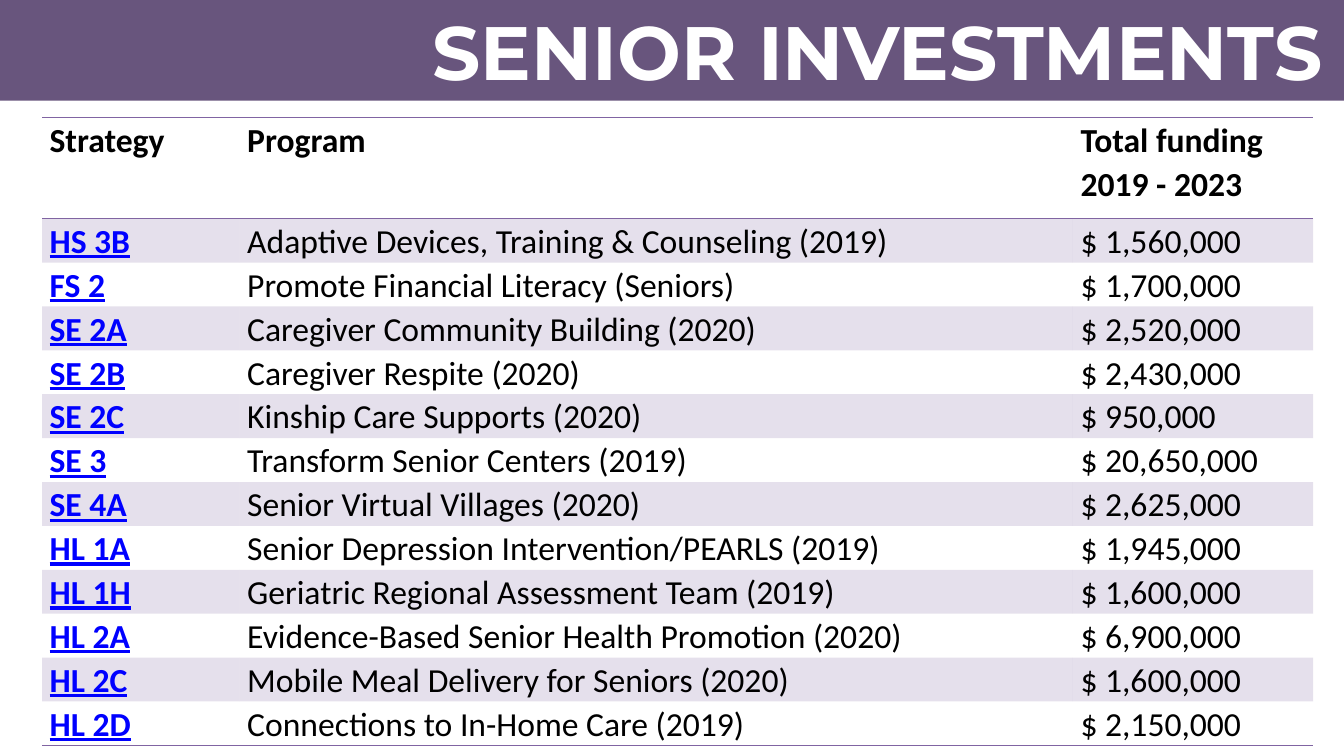
from dataclasses import dataclass

from lxml import etree
from pptx import Presentation
from pptx import util as u
from pptx.dml import color
from pptx.enum import shapes, text
from pptx.oxml import ns


@dataclass(frozen=True)
class Theme:
    """Colours, fonts and type sizes of the deck."""
    band: str = "68557D"
    accent: str = "8064A2"
    ink: str = "000000"
    link: str = "0000FF"
    paper: str = "FFFFFF"
    title_font: str = "Montserrat"
    body_font: str = "Calibri"
    title_size: int = 54
    body_size: int = 24
    stripe_alpha: int = 20
    rule_width: int = 1


THEME = Theme()
PLAIN_TABLE = "{2D5ABB26-0587-4C30-8999-92F81FD0307C}"
COLUMN_WIDTHS = (4.98, 21, 6.05)
HEADER_HEIGHT = 2.54
ROW_HEIGHT = 1.1
HEADER = ("Strategy", "Program", "Total funding\n2019 - 2023")
INVESTMENTS = (
    ("HS 3B", "Adaptive Devices, Training & Counseling (2019)", "$ 1,560,000"),
    ("FS 2", "Promote Financial Literacy (Seniors)", "$ 1,700,000"),
    ("SE 2A", "Caregiver Community Building (2020)", "$ 2,520,000"),
    ("SE 2B", "Caregiver Respite (2020)", "$ 2,430,000"),
    ("SE 2C", "Kinship Care Supports (2020)", "$ 950,000"),
    ("SE 3", "Transform Senior Centers (2019)", "$ 20,650,000"),
    ("SE 4A", "Senior Virtual Villages (2020)", "$ 2,625,000"),
    ("HL 1A", "Senior Depression Intervention/PEARLS (2019)", "$ 1,945,000"),
    ("HL 1H", "Geriatric Regional Assessment Team (2019)", "$ 1,600,000"),
    ("HL 2A", "Evidence-Based Senior Health Promotion (2020)", "$ 6,900,000"),
    ("HL 2C", "Mobile Meal Delivery for Seniors (2020)", "$ 1,600,000"),
    ("HL 2D", "Connections to In-Home Care (2019)", "$ 2,150,000"),
)


def rgb(value):
    """Turn a hex string into a colour."""
    return color.RGBColor.from_string(value)


def write(frame, words, *, font=THEME.body_font, size=THEME.body_size, ink=THEME.ink,
          bold=False, underline=False, align=text.PP_ALIGN.LEFT, spacing=1.0):
    """Fill a text frame with one paragraph for each line of words."""
    frame.word_wrap = True
    for index, line in enumerate(words.split("\n")):
        para = frame.add_paragraph() if index else frame.paragraphs[0]
        para.alignment = align
        para.line_spacing = spacing
        span = para.add_run()
        span.text = line
        span.font.name = font
        span.font.size = u.Pt(size)
        span.font.bold = bold
        span.font.underline = underline
        span.font.color.rgb = rgb(ink)


def shade(cell, striped):
    """Give a cell a translucent stripe or no fill."""
    if not striped:
        cell.fill.background()
        return
    cell.fill.solid()
    cell.fill.fore_color.rgb = rgb(THEME.accent)
    tint = cell._tc.tcPr.find(".//" + ns.qn("a:srgbClr"))
    etree.SubElement(tint, ns.qn("a:alpha"), val=str(THEME.stripe_alpha * 1000))


def rule(cell, sides):
    """Draw accent borders on the named sides, given in schema order."""
    for position, side in enumerate(sides):
        line = etree.Element(ns.qn(f"a:ln{side}"), w=str(u.Pt(THEME.rule_width)))
        fill = etree.SubElement(line, ns.qn("a:solidFill"))
        etree.SubElement(fill, ns.qn("a:srgbClr"), val=THEME.accent)
        cell._tc.tcPr.insert(position, line)


def add_title_band(page, words, left, top, width, height):
    """Place the coloured band with the slide title on it."""
    band = page.shapes.add_shape(shapes.MSO_SHAPE.RECTANGLE,
                                 u.Cm(left), u.Cm(top), u.Cm(width), u.Cm(height))
    band.shadow.inherit = False
    band.fill.solid()
    band.fill.fore_color.rgb = rgb(THEME.band)
    band.line.fill.background()
    title = page.shapes.title
    title._element.addprevious(band._element)
    title.left, title.top = u.Cm(left + 0.56), u.Cm(top + 0.2)
    title.width, title.height = u.Cm(width - 0.85), u.Cm(height - 0.42)
    frame = title.text_frame
    frame.auto_size = text.MSO_AUTO_SIZE.NONE
    frame.vertical_anchor = text.MSO_ANCHOR.MIDDLE
    write(frame, words, font=THEME.title_font, size=THEME.title_size,
          ink=THEME.paper, bold=True, align=text.PP_ALIGN.RIGHT)


def add_investment_table(page, left, top, width, height):
    """Place the striped table of strategies, programs and funding."""
    rows = (HEADER,) + INVESTMENTS
    table = page.shapes.add_table(len(rows), len(HEADER), u.Cm(left), u.Cm(top),
                                  u.Cm(width), u.Cm(height)).table
    table.first_row = table.horz_banding = False
    table._tbl.tblPr.find(ns.qn("a:tableStyleId")).text = PLAIN_TABLE
    for column, column_width in zip(table.columns, COLUMN_WIDTHS):
        column.width = u.Cm(column_width)
    for index, values in enumerate(rows):
        header = index == 0
        table.rows[index].height = u.Cm(HEADER_HEIGHT if header else ROW_HEIGHT)
        sides = "TB" if header else "B" if index == len(rows) - 1 else ""
        for column, words in enumerate(values):
            cell = table.cell(index, column)
            cell.margin_left = cell.margin_right = u.Cm(0.19)
            cell.margin_top = cell.margin_bottom = 0
            linked = column == 0 and not header
            write(cell.text_frame, words, bold=header or linked, underline=linked,
                  ink=THEME.link if linked else THEME.ink, spacing=1.07)
            shade(cell, index % 2 == 1)
            rule(cell, sides)


def main():
    """Build the deck and save it."""
    deck = Presentation()
    deck.slide_width, deck.slide_height = u.Cm(33.87), u.Cm(19.05)
    page = deck.slides.add_slide(deck.slide_layouts[5])
    add_title_band(page, "SENIOR INVESTMENTS", 0, 0, 33.87, 2.54)
    add_investment_table(page, 1.06, 2.97, sum(COLUMN_WIDTHS),
                         HEADER_HEIGHT + ROW_HEIGHT * len(INVESTMENTS))
    deck.save("out.pptx")


if __name__ == "__main__":
    main()
